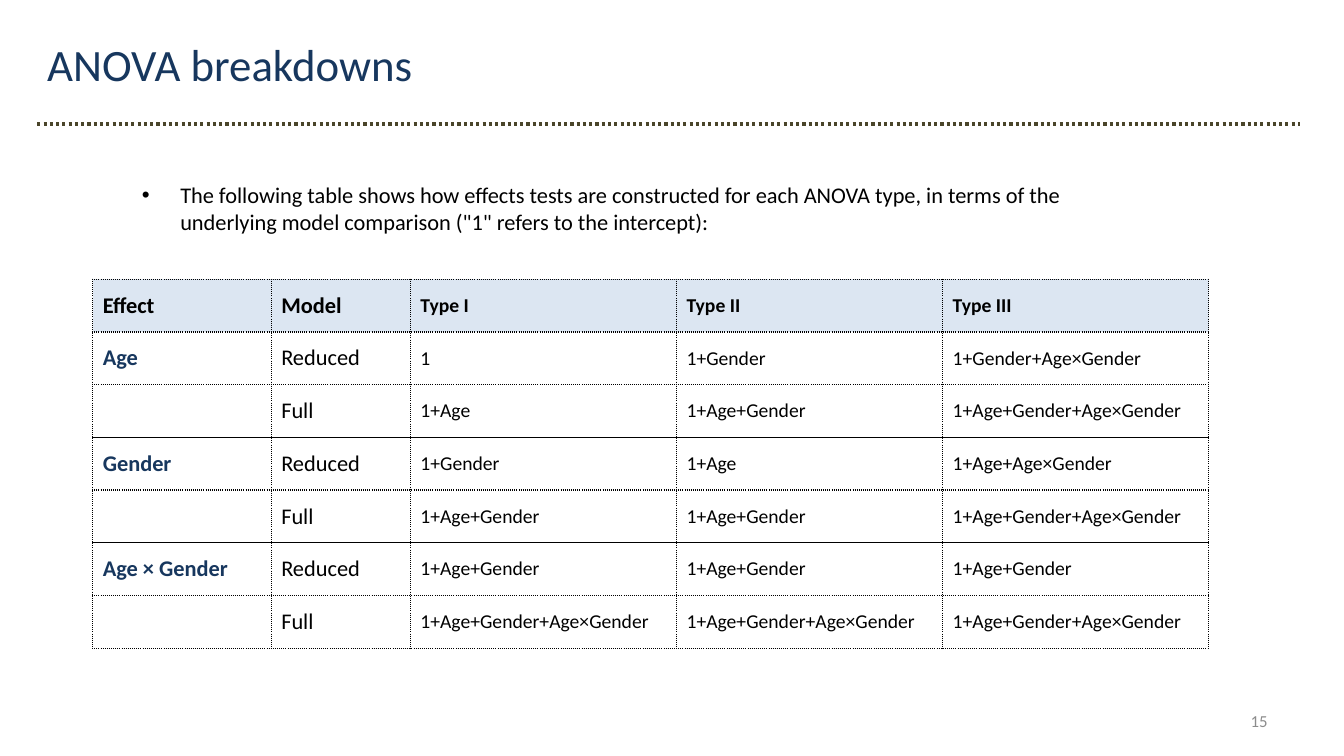
from pptx import Presentation
from pptx.dml.color import RGBColor
from pptx.enum.dml import MSO_LINE
from pptx.enum.shapes import MSO_CONNECTOR
from pptx.enum.text import MSO_ANCHOR, PP_ALIGN
from pptx.oxml.ns import qn
from pptx.util import Pt
from lxml import etree

STRAIGHT = MSO_CONNECTOR.STRAIGHT
SYS_DOT = MSO_LINE.ROUND_DOT
TOP, MIDDLE = MSO_ANCHOR.TOP, MSO_ANCHOR.MIDDLE
LEFT, RIGHT = PP_ALIGN.LEFT, PP_ALIGN.RIGHT

NAVY, BLACK, OLIVE = "17375E", "000000", "4A452A"
GRAY, PALE_BLUE = "8C8C8C", "DCE6F2"

COLUMN_WIDTHS = [177, 138, 264, 264, 264]
HEADINGS = ["Effect", "Model", "Type I", "Type II", "Type III"]
COMPARISONS = [
    ["Age", "Reduced", "1", "1+Gender", "1+Gender+Age×Gender"],
    ["", "Full", "1+Age", "1+Age+Gender", "1+Age+Gender+Age×Gender"],
    ["Gender", "Reduced", "1+Gender", "1+Age", "1+Age+Age×Gender"],
    ["", "Full", "1+Age+Gender", "1+Age+Gender", "1+Age+Gender+Age×Gender"],
    ["Age × Gender", "Reduced"] + ["1+Age+Gender"] * 3,
    ["", "Full"] + ["1+Age+Gender+Age×Gender"] * 3,
]


def px(length):
    return length * 9144  # 100 px to the inch


def color(hex_string):
    return RGBColor.from_string(hex_string)


class SlideBuilder:
    def __init__(self, slide, font="Calibri"):
        self.slide = slide
        self.font = font

    def style(self, paragraph, size, hex_string, bold=False):
        font = paragraph.font
        font.name, font.size, font.bold = self.font, Pt(size), bold
        font.color.rgb = color(hex_string)

    def text(self, words, left, top, width, height, size, hex_string,
             align=LEFT, anchor=TOP):
        box = self.slide.shapes.add_textbox(px(left), px(top), px(width), px(height))
        frame = box.text_frame
        frame.word_wrap = True
        frame.vertical_anchor = anchor
        paragraph = frame.paragraphs[0]
        paragraph.text = words
        paragraph.alignment = align
        self.style(paragraph, size, hex_string)
        return paragraph

    def bullet(self, words, left, top, width, height, size, hex_string, indent):
        paragraph = self.text(words, left, top, width, height, size, hex_string)
        paragraph.space_before = Pt(size * 0.2)
        properties = paragraph._p.get_or_add_pPr()
        properties.set("marL", str(px(indent)))
        properties.set("indent", str(-px(indent)))
        etree.SubElement(properties, qn("a:buFont")).set("typeface", "Arial")
        etree.SubElement(properties, qn("a:buChar")).set("char", "•")
        # The paragraph's default font follows its bullet
        properties.append(properties.find(qn("a:defRPr")))

    def dotted_rule(self, left, right, y, hex_string, weight):
        rule = self.slide.shapes.add_connector(
            STRAIGHT, px(left), px(y), px(right), px(y))
        rule.line.color.rgb = color(hex_string)
        rule.line.width = Pt(weight)
        rule.line.dash_style = SYS_DOT
        etree.SubElement(rule._element.spPr, qn("a:effectLst"))

    def border(self, cell, side, dash, hex_string=BLACK):
        edge = etree.SubElement(cell._tc.get_or_add_tcPr(), qn("a:ln" + side))
        edge.set("w", str(Pt(1)))
        fill = etree.SubElement(edge, qn("a:solidFill"))
        etree.SubElement(fill, qn("a:srgbClr")).set("val", hex_string)
        etree.SubElement(edge, qn("a:prstDash")).set("val", dash)

    def cell(self, cell, words, size, hex_string, bold, fill, solid_sides):
        cell.vertical_anchor = MIDDLE
        for side in "LRTB":
            self.border(cell, side, "solid" if side in solid_sides else "sysDot")
        if fill:
            cell.fill.solid()
            cell.fill.fore_color.rgb = color(fill)
        else:
            cell.fill.background()
        paragraph = cell.text_frame.paragraphs[0]
        paragraph.text = words
        self.style(paragraph, size, hex_string, bold)

    def effects_table(self, left, top, height, widths, rows):
        table = self.slide.shapes.add_table(
            len(rows), len(widths), px(left), px(top), px(sum(widths)), px(height)).table
        table.first_row = table.horz_banding = False
        for column, width in zip(table.columns, widths):
            column.width = px(width)
        for r, row in enumerate(rows):
            # A solid line parts one effect's pair of models from the next
            solid_sides = ""
            if r in (2, 4):
                solid_sides = "B"
            elif r in (3, 5):
                solid_sides = "T"
            for c, words in enumerate(row):
                self.cell(table.cell(r, c), words,
                          size=16 if c < 2 else 14,
                          hex_string=NAVY if r and c == 0 else BLACK,
                          bold=r == 0 or c == 0,
                          fill=None if r else PALE_BLUE,
                          solid_sides=solid_sides)


def main():
    deck = Presentation()
    deck.slide_width, deck.slide_height = px(1333), px(750)
    builder = SlideBuilder(deck.slides.add_slide(deck.slide_layouts[6]))

    # Page number, rule and title
    builder.text("15", 956, 695, 311, 40, 12, GRAY, RIGHT, MIDDLE)
    builder.dotted_rule(37, 1289, 123, OLIVE, 2.25)
    builder.text("ANOVA breakdowns", 37, 32, 1165, 64, 32, NAVY)

    # Model comparisons by ANOVA type
    builder.effects_table(92, 277, 366, COLUMN_WIDTHS, [HEADINGS] + COMPARISONS)

    # Introduction
    builder.bullet(
        "The following table shows how effects tests are constructed for each "
        "ANOVA type, in terms of the underlying model comparison "
        "(\"1\" refers to the intercept):",
        131, 175, 976, 539, 16, BLACK, indent=38)

    deck.save("out.pptx")


if __name__ == "__main__":
    main()
